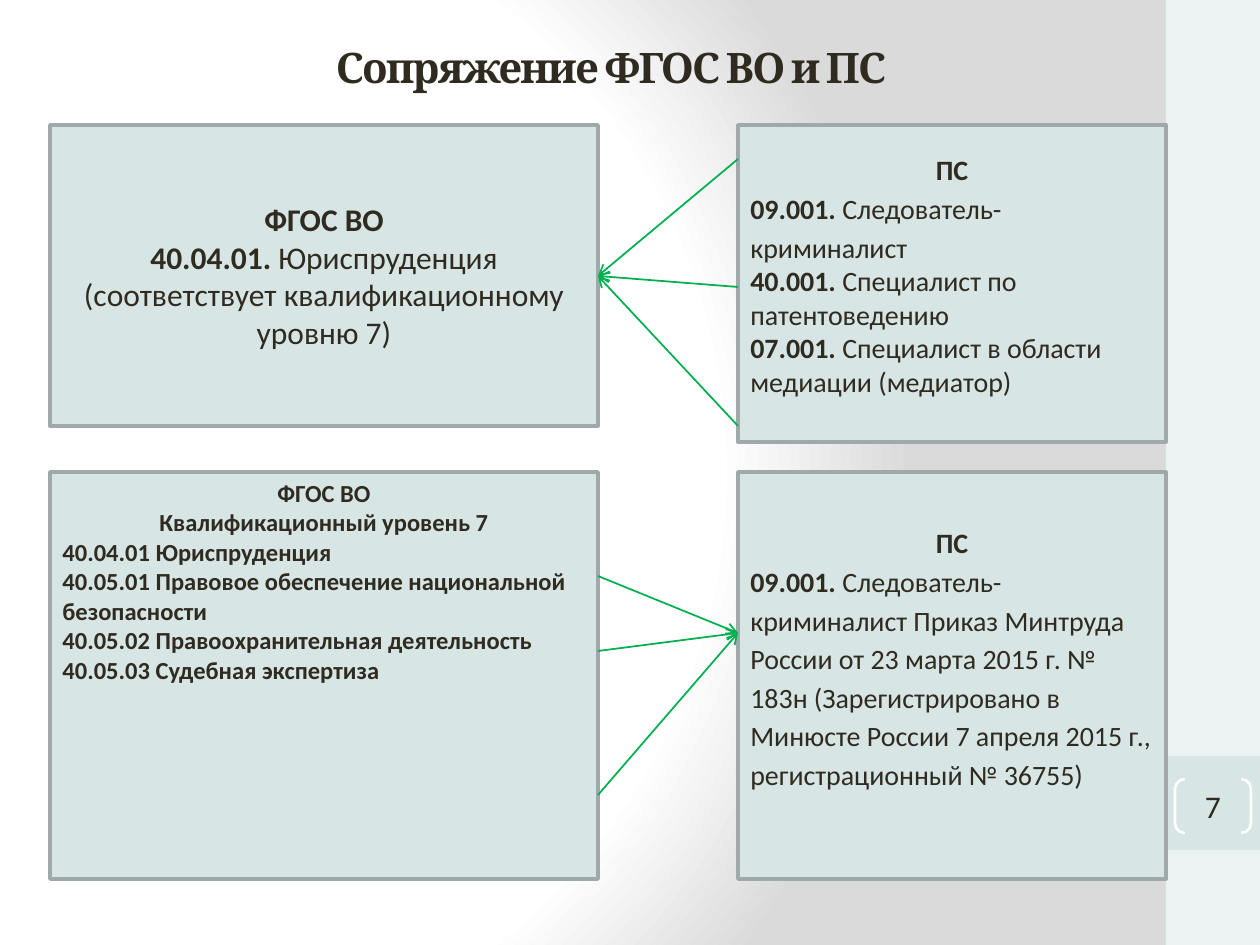
import dataclasses
import typing

import lxml.etree
import pptx
import pptx.dml.color
import pptx.enum.shapes
import pptx.enum.text
import pptx.oxml
import pptx.oxml.ns
import pptx.util

RGB = pptx.dml.color.RGBColor
SHAPE = pptx.enum.shapes.MSO_SHAPE
ALIGN = pptx.enum.text.PP_ALIGN
ANCHOR = pptx.enum.text.MSO_ANCHOR
qn = pptx.oxml.ns.qn

DARK = RGB(0x2F, 0x2B, 0x20)
PALE = RGB(0xEB, 0xF2, 0xF1)
MINT = RGB(0xD7, 0xE5, 0xE4)
GREY = RGB(0x9F, 0xA9, 0xA9)
GREEN = RGB(0x00, 0xB0, 0x50)
WHITE = RGB(0xFF, 0xFF, 0xFF)

PX = 914400 / 126  # EMU in one px
PAD = 6  # top and bottom inset of a box, px
LEFT, LEFT_W = 50, 548
RIGHT, RIGHT_W = 738, 428
TOP, LOW, LOW_H = 125, 472, 407

BACK = """<p:bg xmlns:p="http://schemas.openxmlformats.org/presentationml/2006/main"
 xmlns:a="http://schemas.openxmlformats.org/drawingml/2006/main"><p:bgPr>
<a:gradFill rotWithShape="1"><a:gsLst>
<a:gs pos="0"><a:srgbClr val="FFFFFF"/></a:gs>
<a:gs pos="75000"><a:srgbClr val="FFFFFF"/></a:gs>
<a:gs pos="100000"><a:srgbClr val="DADADA"/></a:gs></a:gsLst>
<a:path path="circle"><a:fillToRect l="20000" t="50000" r="100000" b="50000"/></a:path>
</a:gradFill><a:effectLst/></p:bgPr></p:bg>"""


@dataclasses.dataclass
class Para:
    bold: str = ""
    plain: str = ""
    align: typing.Any = ALIGN.LEFT
    space: float = 1.0


@dataclasses.dataclass
class Box:
    x: int
    y: int
    w: int
    h: int
    size: int
    paras: list[Para]
    anchor: typing.Any = ANCHOR.MIDDLE
    foot: int = PAD  # bottom inset, px


@dataclasses.dataclass
class Fan:
    x: int  # side where the arrows start
    starts: list[int]
    tip_x: int
    tip_y: int


def head(text: str, space: float = 1.0) -> Para:
    return Para(text, align=ALIGN.CENTER, space=space)


BOXES = [
    Box(LEFT, TOP, LEFT_W, 301, 18, [
        head("ФГОС ВО"),
        Para("40.04.01. ", "Юриспруденция (соответствует квалификационному уровню 7)",
             ALIGN.CENTER)]),
    Box(RIGHT, TOP, RIGHT_W, 317, 16, [
        head("ПС"),
        Para("09.001. ", "Следователь-криминалист", space=1.15),
        Para("40.001. ", "Специалист по патентоведению"),
        Para("07.001. ", "Специалист в области медиации (медиатор)")], foot=22),
    Box(LEFT, LOW, LEFT_W, LOW_H, 14, [
        head("ФГОС ВО"),
        head("Квалификационный уровень 7"),
        Para("40.04.01 Юриспруденция"),
        Para("40.05.01 Правовое обеспечение национальной безопасности"),
        Para("40.05.02 Правоохранительная деятельность"),
        Para("40.05.03 Судебная экспертиза")], ANCHOR.TOP),
    Box(RIGHT, LOW, RIGHT_W, LOW_H, 16, [
        head("ПС", 1.15),
        Para("09.001. ", "Следователь-криминалист Приказ Минтруда России "
             "от 23 марта 2015 г. № 183н (Зарегистрировано в Минюсте России "
             "7 апреля 2015 г., регистрационный № 36755)", space=1.15)], foot=45),
]
FANS = [
    Fan(RIGHT, [159, 287, 426], LEFT + LEFT_W, 276),
    Fan(LEFT + LEFT_W, [795, 576, 651], RIGHT, 633),
]


def emu(*px: int) -> list[pptx.util.Emu]:
    return [pptx.util.Emu(round(n * PX)) for n in px]


def write(para, text: str, *, size: int, font: str = "Calibri",
          bold: bool = False, track: int = 0) -> None:
    run = para.add_run()
    run.text = text
    run.font.size = pptx.util.Pt(size)
    run.font.name = font
    run.font.bold = bold
    run.font.color.rgb = DARK
    if track:
        run.font._element.set("spc", str(track))


def shape(slide, kind, x: int, y: int, w: int, h: int,
          fill=None, line=None, width: float = 2):
    item = slide.shapes.add_shape(kind, *emu(x, y, w, h))
    item.shadow.inherit = False
    if fill is None:
        item.fill.background()
    else:
        item.fill.solid()
        item.fill.fore_color.rgb = fill
    if line is None:
        item.line.fill.background()
    else:
        item.line.color.rgb = line
        item.line.width = pptx.util.Pt(width)
    return item


def draw_box(slide, box: Box) -> None:
    item = shape(slide, SHAPE.RECTANGLE, box.x, box.y, box.w, box.h, MINT, GREY)
    frame = item.text_frame
    frame.word_wrap = True
    frame.vertical_anchor = box.anchor
    frame.margin_top, frame.margin_bottom = emu(PAD, box.foot)
    for i, data in enumerate(box.paras):
        para = frame.add_paragraph() if i else frame.paragraphs[0]
        para.alignment = data.align
        para.line_spacing = data.space
        write(para, data.bold, size=box.size, bold=True)
        if data.plain:
            write(para, data.plain, size=box.size)


def draw_fan(slide, fan: Fan) -> None:
    for y in fan.starts:
        line = slide.shapes.add_connector(
            pptx.enum.shapes.MSO_CONNECTOR.STRAIGHT,
            *emu(fan.x, y, fan.tip_x, fan.tip_y))
        line.line.color.rgb = GREEN
        line.line.width = pptx.util.Pt(1)
        tail = lxml.etree.SubElement(line.line._get_or_add_ln(), qn("a:tailEnd"))
        tail.set("type", "arrow")
        lxml.etree.SubElement(line._element.spPr, qn("a:effectLst"))


def draw_side(slide) -> None:
    shape(slide, SHAPE.RECTANGLE, 1166, 0, 94, 945, PALE)
    shape(slide, SHAPE.RECTANGLE, 1166, 756, 94, 94, MINT)
    mark = shape(slide, SHAPE.DOUBLE_BRACKET, 1175, 779, 76, 54, None, WHITE, 1.5)
    mark.adjustments[0] = 0.18
    frame = mark.text_frame
    frame.margin_left = frame.margin_right = 0
    frame.margin_top = frame.margin_bottom = 0
    frame.vertical_anchor = ANCHOR.MIDDLE
    frame.paragraphs[0].alignment = ALIGN.CENTER
    write(frame.paragraphs[0], "7", size=18)


def draw_title(slide) -> None:
    title = slide.shapes.title
    title.left, title.top, title.width, title.height = emu(64, 0, 1094, 134)
    frame = title.text_frame
    frame.vertical_anchor = ANCHOR.MIDDLE
    frame.paragraphs[0].alignment = ALIGN.CENTER
    write(frame.paragraphs[0], "Сопряжение ФГОС ВО и ПС",
          size=24, font="Cambria", bold=True, track=-100)


def main() -> None:
    deck = pptx.Presentation()
    deck.slide_width, deck.slide_height = emu(1260, 945)
    slide = deck.slides.add_slide(deck.slide_layouts[5])
    # Background and side band
    slide._element.cSld.insert(0, pptx.oxml.parse_xml(BACK))
    draw_side(slide)
    # Heading, boxes and arrows
    draw_title(slide)
    for box in BOXES:
        draw_box(slide, box)
    for fan in FANS:
        draw_fan(slide, fan)
    deck.save("out.pptx")


if __name__ == "__main__":
    main()
